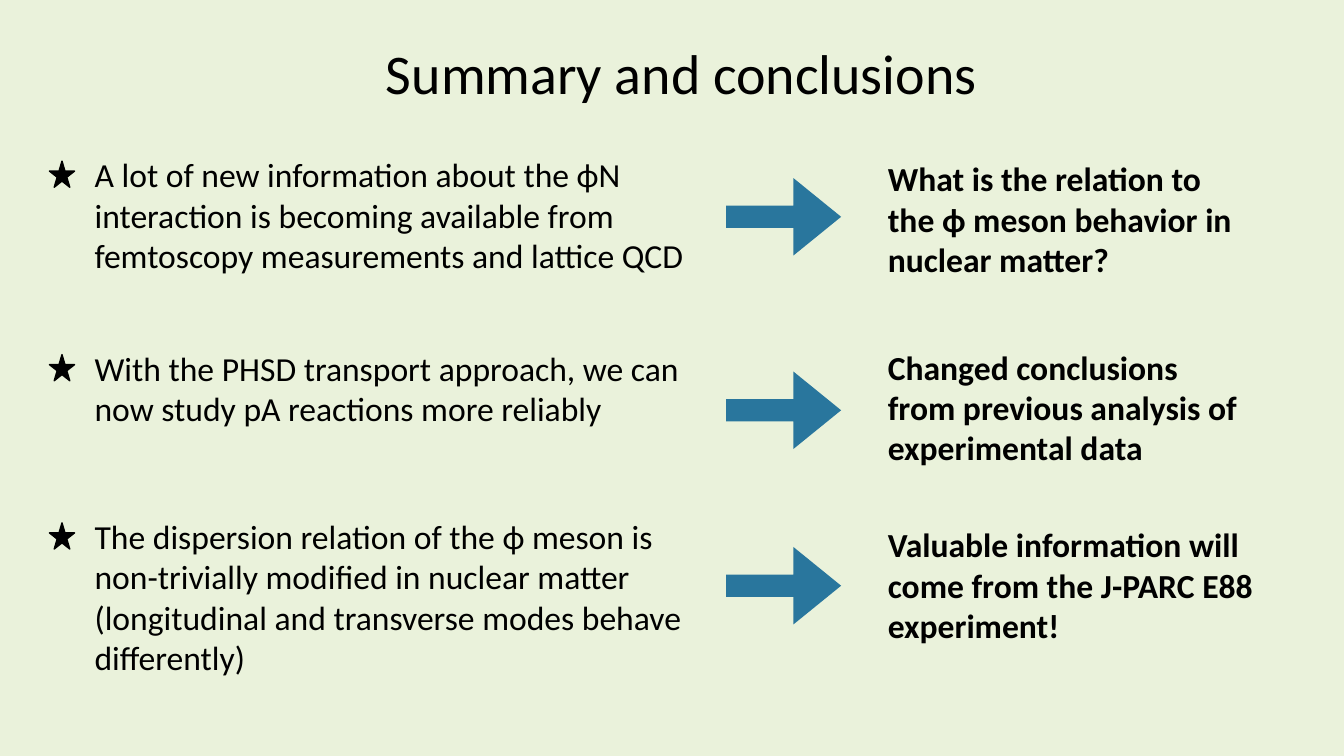
"""Build the summary slide: three findings, each with an arrow to its conclusion."""
from dataclasses import dataclass

import pptx
import pptx.dml.color
import pptx.enum.shapes
import pptx.enum.text
import pptx.shapes.autoshape
import pptx.slide
import pptx.util

Pt = pptx.util.Pt
Shapes = pptx.enum.shapes.MSO_SHAPE
BLACK = "000000"
ARROW_BLUE = "29769D"
BACKGROUND = "EAF2DB"
STAR_DROP = 8.5


@dataclass(frozen=True)
class Box:
    left: float
    top: float
    width: float
    height: float

    def lengths(self) -> tuple[int, int, int, int]:
        return Pt(self.left), Pt(self.top), Pt(self.width), Pt(self.height)


@dataclass(frozen=True)
class Point:
    finding: str
    finding_top: float
    finding_height: float
    arrow_top: float
    conclusion: str
    conclusion_top: float
    conclusion_width: float


POINTS = [
    Point("A lot of new information about the ϕN interaction is becoming available "
          "from femtoscopy measurements and lattice QCD", 106.6, 94.3, 113.8,
          "What is the relation to the ϕ meson behavior in nuclear matter?", 109.4, 272.2),
    Point("With the PHSD transport approach, we can now study pA reactions more reliably",
          244.8, 65.5, 252,
          "Changed conclusions from previous analysis of experimental data", 244.1, 272.2),
    Point("The dispersion relation of the ϕ meson is non-trivially modified in nuclear "
          "matter (longitudinal and transverse modes behave differently)", 365, 123.8, 377.3,
          "Valuable information will come from the J-PARC E88 experiment!", 370.8, 283.7),
]


def set_color(target: pptx.dml.color.ColorFormat, color: str) -> None:
    target.rgb = pptx.dml.color.RGBColor.from_string(color)


def add_text(slide: pptx.slide.Slide, box: Box, text: str,
             size: float = 24, bold: bool = False) -> None:
    frame = slide.shapes.add_textbox(*box.lengths()).text_frame
    frame.word_wrap = True
    frame.auto_size = pptx.enum.text.MSO_AUTO_SIZE.SHAPE_TO_FIT_TEXT
    run = frame.paragraphs[0].add_run()
    run.text = text
    run.font.name = "Calibri"
    run.font.size = Pt(size)
    run.font.bold = bold
    set_color(run.font.color, BLACK)


def add_filled(slide: pptx.slide.Slide, kind: Shapes, box: Box,
               color: str) -> pptx.shapes.autoshape.Shape:
    shape = slide.shapes.add_shape(kind, *box.lengths())
    shape.shadow.inherit = False
    shape.fill.solid()
    set_color(shape.fill.fore_color, color)
    return shape


def add_star(slide: pptx.slide.Slide, top: float) -> None:
    star = add_filled(slide, Shapes.STAR_5_POINT, Box(35.3, top, 18, 18.7), BLACK)
    set_color(star.line.color, BLACK)
    star.line.width = Pt(1)


def add_arrow(slide: pptx.slide.Slide, top: float) -> None:
    arrow = add_filled(slide, Shapes.DOWN_ARROW, Box(532.1, top, 55.4, 82.1), ARROW_BLUE)
    arrow.line.fill.background()
    arrow.rotation = 270
    arrow.adjustments[0] = 0.288
    arrow.adjustments[1] = 0.616


def add_point(slide: pptx.slide.Slide, point: Point) -> None:
    add_text(slide, Box(60.5, point.finding_top, 438.5, point.finding_height), point.finding)
    add_star(slide, point.finding_top + STAR_DROP)
    add_arrow(slide, point.arrow_top)
    add_text(slide, Box(627.1, point.conclusion_top, point.conclusion_width, 94.3),
             point.conclusion, bold=True)


def main() -> None:
    presentation = pptx.Presentation()
    presentation.slide_width, presentation.slide_height = Pt(960), Pt(540)
    slide = presentation.slides.add_slide(presentation.slide_layouts[6])
    slide.background.fill.solid()
    set_color(slide.background.fill.fore_color, BACKGROUND)
    add_text(slide, Box(268.6, 23.8, 550.8, 55.4), "Summary and conclusions", size=40)
    for point in POINTS:
        add_point(slide, point)
    presentation.save("out.pptx")


if __name__ == "__main__":
    main()
